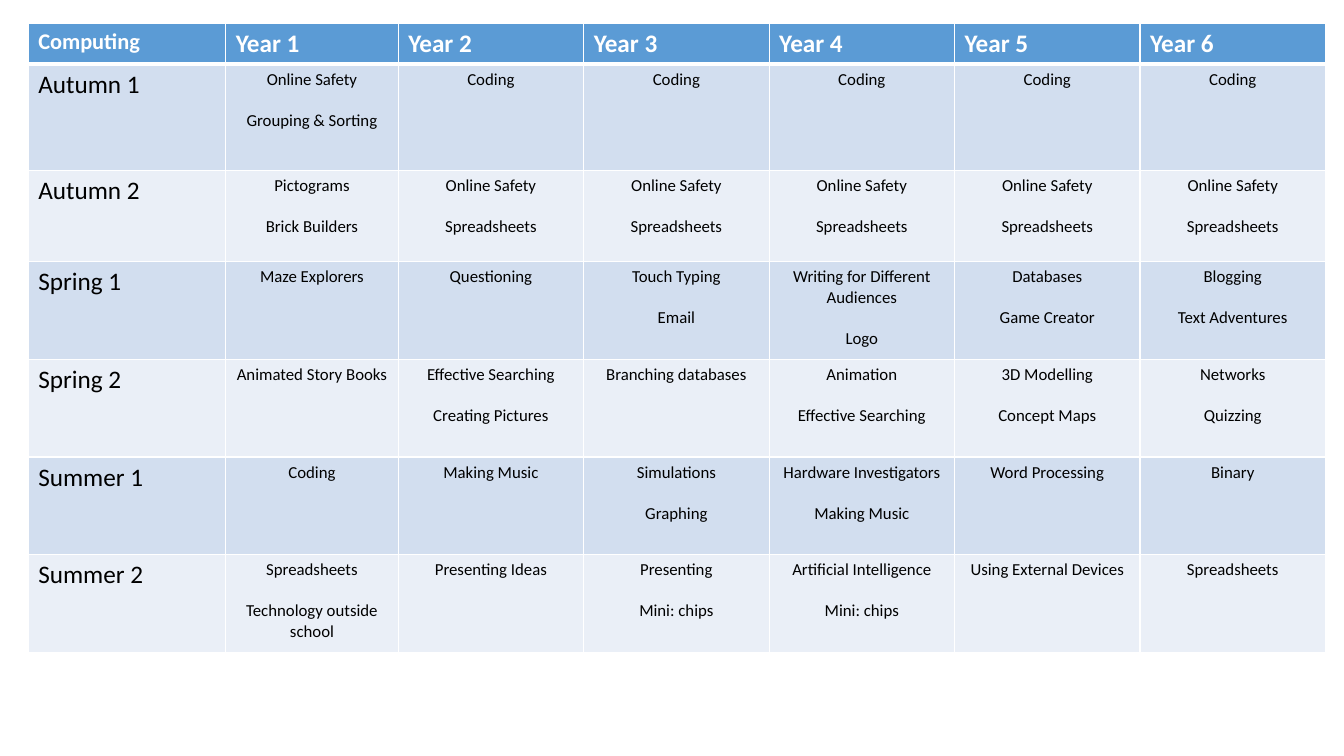
from lxml import etree
from pptx import Presentation
from pptx import util as u
from pptx.dml.color import RGBColor
from pptx.enum import text
from pptx.oxml import ns

WHITE = RGBColor(0xFF, 0xFF, 0xFF)
BLACK = RGBColor(0x00, 0x00, 0x00)
HEADER_BLUE = RGBColor(0x5B, 0x9B, 0xD5)
BAND_DARK = RGBColor(0xD2, 0xDE, 0xEF)
BAND_LIGHT = RGBColor(0xEA, 0xEF, 0xF7)

# Table position, column widths and row heights as percentages of the slide
LEFT, TOP = 2.1, 3.07
COLUMN_SHARES = [14.7, 12.83] + [13.8] * 5
ROW_SHARES = [4.93, 14.13, 12] + [12.93] * 4

YEARS = [f"Year {number}" for number in range(1, 7)]
SAFETY_AND_SHEETS = ["Online Safety", "Spreadsheets"]

# Topics of each half term, one list per year
CURRICULUM = {
    "Autumn 1": [["Online Safety", "Grouping & Sorting"]] + [["Coding"]] * 5,
    "Autumn 2": [["Pictograms", "Brick Builders"]] + [SAFETY_AND_SHEETS] * 5,
    "Spring 1": [
        ["Maze Explorers"],
        ["Questioning"],
        ["Touch Typing", "Email"],
        ["Writing for Different Audiences", "Logo"],
        ["Databases", "Game Creator"],
        ["Blogging", "Text Adventures"],
    ],
    "Spring 2": [
        ["Animated Story Books"],
        ["Effective Searching", "Creating Pictures"],
        ["Branching databases"],
        ["Animation", "Effective Searching"],
        ["3D Modelling", "Concept Maps"],
        ["Networks", "Quizzing"],
    ],
    "Summer 1": [
        ["Coding"],
        ["Making Music"],
        ["Simulations", "Graphing"],
        ["Hardware Investigators", "Making Music"],
        ["Word Processing"],
        ["Binary"],
    ],
    "Summer 2": [
        ["Spreadsheets", "Technology outside school"],
        ["Presenting Ideas"],
        ["Presenting", "Mini: chips"],
        ["Artificial Intelligence", "Mini: chips"],
        ["Using External Devices"],
        ["Spreadsheets"],
    ],
}


class SlideBuilder:
    """Holds the style and the current slide."""

    font_name = "Calibri"
    topic_gap = u.Pt(14.65)  # one line of 12 pt text

    def __init__(self, presentation):
        self.presentation = presentation
        self.slide = presentation.slides.add_slide(presentation.slide_layouts[6])

    def across(self, percent):
        return round(self.presentation.slide_width * percent / 100)

    def down(self, percent):
        return round(self.presentation.slide_height * percent / 100)

    def table(self, left, top, column_shares, row_shares):
        frame = self.slide.shapes.add_table(
            len(row_shares), len(column_shares),
            self.across(left), self.down(top),
            self.across(sum(column_shares)), self.down(sum(row_shares)))
        table = frame.table
        for column, share in zip(table.columns, column_shares):
            column.width = self.across(share)
        for row, share in zip(table.rows, row_shares):
            row.height = self.down(share)
        return table

    def cell(self, cell, lines, fill, size, color=BLACK, bold=False,
             centred=False, top=1, bottom=1):
        cell.fill.solid()
        cell.fill.fore_color.rgb = fill
        self.borders(cell, {"lnL": 1, "lnR": 1, "lnT": top, "lnB": bottom})
        frame = cell.text_frame
        for index, line in enumerate(lines):
            paragraph = frame.add_paragraph() if index else frame.paragraphs[0]
            if index:
                paragraph.space_before = self.topic_gap
            if centred:
                paragraph.alignment = text.PP_ALIGN.CENTER
            run = paragraph.add_run()
            run.text = line
            run.font.name = self.font_name
            run.font.size = u.Pt(size)
            run.font.bold = bold
            run.font.color.rgb = color

    def borders(self, cell, widths):
        properties = cell._tc.get_or_add_tcPr()
        # Border lines come before the fill
        for position, (tag, width) in enumerate(widths.items()):
            line = etree.Element(ns.qn(f"a:{tag}"), w=str(u.Pt(width)))
            solid = etree.SubElement(line, ns.qn("a:solidFill"))
            etree.SubElement(solid, ns.qn("a:srgbClr"), val=str(WHITE))
            properties.insert(position, line)


def main():
    presentation = Presentation()
    presentation.slide_width = u.Inches(13.33)
    presentation.slide_height = u.Inches(7.5)
    builder = SlideBuilder(presentation)
    table = builder.table(LEFT, TOP, COLUMN_SHARES, ROW_SHARES)

    # Header row
    for column, heading in enumerate(["Computing"] + YEARS):
        builder.cell(table.cell(0, column), [heading], HEADER_BLUE,
                     size=18 if column else 16, color=WHITE, bold=True, bottom=3)

    # Half terms in alternating bands
    for row, (term, topics_by_year) in enumerate(CURRICULUM.items(), start=1):
        band = BAND_DARK if row % 2 else BAND_LIGHT
        top = 3 if row == 1 else 1
        builder.cell(table.cell(row, 0), [term], band, size=18, top=top)
        for column, topics in enumerate(topics_by_year, start=1):
            builder.cell(table.cell(row, column), topics, band, size=12,
                         centred=True, top=top)

    presentation.save("out.pptx")


if __name__ == "__main__":
    main()
